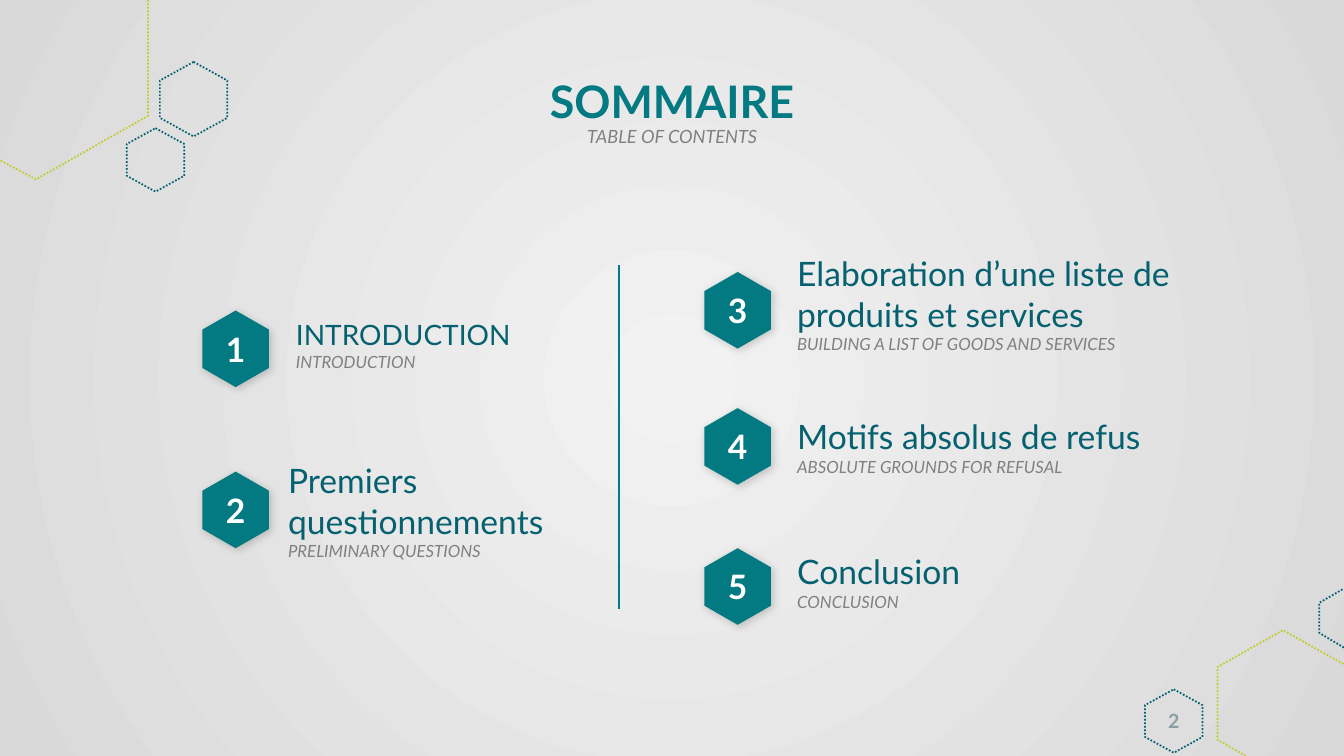
from dataclasses import dataclass

from lxml import etree
from pptx import Presentation
from pptx.dml.color import RGBColor
from pptx.enum.dml import MSO_LINE
from pptx.enum.shapes import MSO_CONNECTOR
from pptx.enum.text import MSO_ANCHOR, MSO_AUTO_SIZE, PP_ALIGN
from pptx.oxml.ns import qn
from pptx.util import Cm, Pt

CENTER, LEFT = PP_ALIGN.CENTER, PP_ALIGN.LEFT
MIDDLE = MSO_ANCHOR.MIDDLE
NO_AUTOFIT = MSO_AUTO_SIZE.NONE
DOTTED = MSO_LINE.ROUND_DOT
STRAIGHT = MSO_CONNECTOR.STRAIGHT
TITLE_ONLY = 5


@dataclass(frozen=True)
class Theme:
    font: str = "Lato"
    teal: str = "037A82"
    dark_teal: str = "05616F"
    divider: str = "007A8C"
    lime: str = "C1CC26"
    gray: str = "808080"
    page_gray: str = "8C9DA3"
    white: str = "FFFFFF"
    background: tuple = ("F2F2F2", "D9D9D9")
    title: int = 32
    title_translation: int = 13
    entry: int = 24
    small_entry: int = 20
    translation: int = 12
    page: int = 14


THEME = Theme()
HEXAGON_SIDE = 0.25  # height of each slanted side, as a share of the hexagon
BADGE_SIZE = (1.68, 1.93)
LEFT_BADGE, RIGHT_BADGE = 5.94, 18.59

# number, badge centre, text box, heading size, heading, translation
ENTRIES = [
    ("1", (LEFT_BADGE, 8.79), (7.21, 8.08, 9.93, 1.22), THEME.small_entry,
     "INTRODUCTION", "INTRODUCTION"),
    ("2", (LEFT_BADGE, 12.85), (7.01, 11.76, 9.93, 2.21), THEME.entry,
     "Premiers questionnements", "PRELIMINARY QUESTIONS"),
    ("3", (RIGHT_BADGE, 7.82), (19.84, 6.55, 11.99, 2.21), THEME.entry,
     "Elaboration d’une liste de produits et services",
     "BUILDING A LIST OF GOODS AND SERVICES"),
    ("4", (RIGHT_BADGE, 11.25), (19.84, 10.44, 11.99, 1.63), THEME.entry,
     "Motifs absolus de refus", "ABSOLUTE GROUNDS FOR REFUSAL"),
    ("5", (RIGHT_BADGE, 14.78), (19.84, 13.54, 9.93, 2.21), THEME.entry,
     "Conclusion", "CONCLUSION"),
]

CORNER_OUTLINES = [
    (THEME.lime, [(3.73, 0), (3.73, 2.92), (0.91, 4.52), (0, 4.04)]),
    (THEME.lime, [(31.39, 19.05), (30.68, 18.64), (30.68, 16.81),
                  (32.33, 15.88), (33.87, 16.74)]),
    (THEME.dark_teal, [(33.87, 16.32), (33.25, 15.95), (33.25, 15.19),
                       (33.87, 14.83)]),
]


def set_attributes(target, values):
    for name, value in values.items():
        setattr(target, name, value)


def text_format(size, color, bold=False, italic=False):
    return {"name": THEME.font, "size": Pt(size), "bold": bold,
            "italic": italic, "color": color}


def write_text(text_frame, lines, alignment=LEFT, spacing=1.0):
    """Fill the frame with one paragraph for each (text, format) pair."""
    set_attributes(text_frame, {"word_wrap": True, "auto_size": NO_AUTOFIT,
                                "vertical_anchor": MIDDLE})
    for index, (text, values) in enumerate(lines):
        paragraph = (text_frame.add_paragraph() if index
                     else text_frame.paragraphs[0])
        set_attributes(paragraph, {"alignment": alignment,
                                   "line_spacing": spacing})
        run = paragraph.add_run()
        run.text = text
        set_attributes(run.font, {name: value for name, value in values.items()
                                  if name != "color"})
        run.font.color.rgb = RGBColor.from_string(values["color"])


def set_radial_background(slide):
    fill = slide.background.fill
    fill.gradient()
    for stop, color in zip(fill.gradient_stops, THEME.background):
        stop.color.rgb = RGBColor.from_string(color)
    gradient = slide.element.find(".//" + qn("a:gradFill"))
    linear = gradient.find(qn("a:lin"))
    radial = etree.Element(qn("a:path"), {"path": "circle"})
    etree.SubElement(radial, qn("a:fillToRect"),
                     dict.fromkeys("ltrb", "50000"))
    gradient.replace(linear, radial)


def add_polygon(slide, points, close):
    start, *others = [(Cm(x), Cm(y)) for x, y in points]
    builder = slide.shapes.build_freeform(*start)
    builder.add_line_segments(others, close=close)
    shape = builder.convert_to_shape()
    shape.shadow.inherit = False
    return shape


def add_dotted_outline(slide, points, color, close=False):
    shape = add_polygon(slide, points, close)
    shape.fill.background()
    shape.line.color.rgb = RGBColor.from_string(color)
    set_attributes(shape.line, {"width": Pt(1.25), "dash_style": DOTTED})
    return shape


def hexagon_points(center, size):
    x, y = center
    half_width, half_height = size[0] / 2, size[1] / 2
    shoulder = half_height - HEXAGON_SIDE * size[1]
    return [(x, y - half_height),
            (x + half_width, y - shoulder), (x + half_width, y + shoulder),
            (x, y + half_height),
            (x - half_width, y + shoulder), (x - half_width, y - shoulder)]


def write_number(shape, number, values):
    margins = ("margin_left", "margin_right", "margin_top", "margin_bottom")
    set_attributes(shape.text_frame, dict.fromkeys(margins, 0))
    write_text(shape.text_frame, [(number, values)], CENTER)


def add_soft_shadow(shape):
    effects = shape.element.spPr.find(qn("a:effectLst"))
    shadow = etree.SubElement(effects, qn("a:outerShdw"), {
        "blurRad": str(Pt(6)), "dist": str(Pt(2)), "dir": "2700000",
        "rotWithShape": "0"})
    color = etree.SubElement(shadow, qn("a:srgbClr"), {"val": "000000"})
    etree.SubElement(color, qn("a:alpha"), {"val": "19000"})


def add_badge(slide, number, center):
    badge = add_polygon(slide, hexagon_points(center, BADGE_SIZE), True)
    badge.fill.solid()
    badge.fill.fore_color.rgb = RGBColor.from_string(THEME.teal)
    badge.line.fill.background()
    add_soft_shadow(badge)
    write_number(badge, number,
                 text_format(THEME.entry, THEME.white, bold=True))


def add_entry(slide, number, center, box, size, heading, translation):
    add_badge(slide, number, center)
    text_box = slide.shapes.add_textbox(*map(Cm, box))
    write_text(text_box.text_frame, [
        (heading, text_format(size, THEME.dark_teal)),
        (translation, text_format(THEME.translation, THEME.gray, italic=True)),
    ])


def add_divider(slide, x, top, bottom):
    line = slide.shapes.add_connector(STRAIGHT, Cm(x), Cm(top),
                                      Cm(x), Cm(bottom))
    line.line.color.rgb = RGBColor.from_string(THEME.divider)
    line.line.width = Pt(1.5)
    etree.SubElement(line.element.spPr, qn("a:effectLst"))


def set_title(slide):
    title = slide.shapes.title
    set_attributes(title, {"left": Cm(3.2), "top": Cm(1.02),
                           "width": Cm(27.48), "height": Cm(3.68)})
    write_text(title.text_frame, [
        ("SOMMAIRE", text_format(THEME.title, THEME.teal, bold=True)),
        ("TABLE OF CONTENTS",
         text_format(THEME.title_translation, THEME.gray, italic=True)),
    ], CENTER, 0.9)


def add_decoration(slide):
    for color, points in CORNER_OUTLINES:
        add_dotted_outline(slide, points, color)
    for center, size, number in [((4.88, 2.5), (1.7, 1.88), ""),
                                 ((3.92, 4.03), (1.45, 1.6), ""),
                                 ((29.58, 18.17), (1.45, 1.6), "2")]:
        hexagon = add_dotted_outline(slide, hexagon_points(center, size),
                                     THEME.dark_teal, close=True)
        if number:
            write_number(hexagon, number,
                         text_format(THEME.page, THEME.page_gray, bold=True))


def main():
    presentation = Presentation()
    set_attributes(presentation, {"slide_width": Cm(33.87),
                                  "slide_height": Cm(19.05)})
    slide = presentation.slides.add_slide(
        presentation.slide_layouts[TITLE_ONLY])
    set_radial_background(slide)
    add_decoration(slide)
    set_title(slide)
    add_divider(slide, 15.6, 6.68, 15.34)
    for entry in ENTRIES:
        add_entry(slide, *entry)
    presentation.save("out.pptx")


if __name__ == "__main__":
    main()
